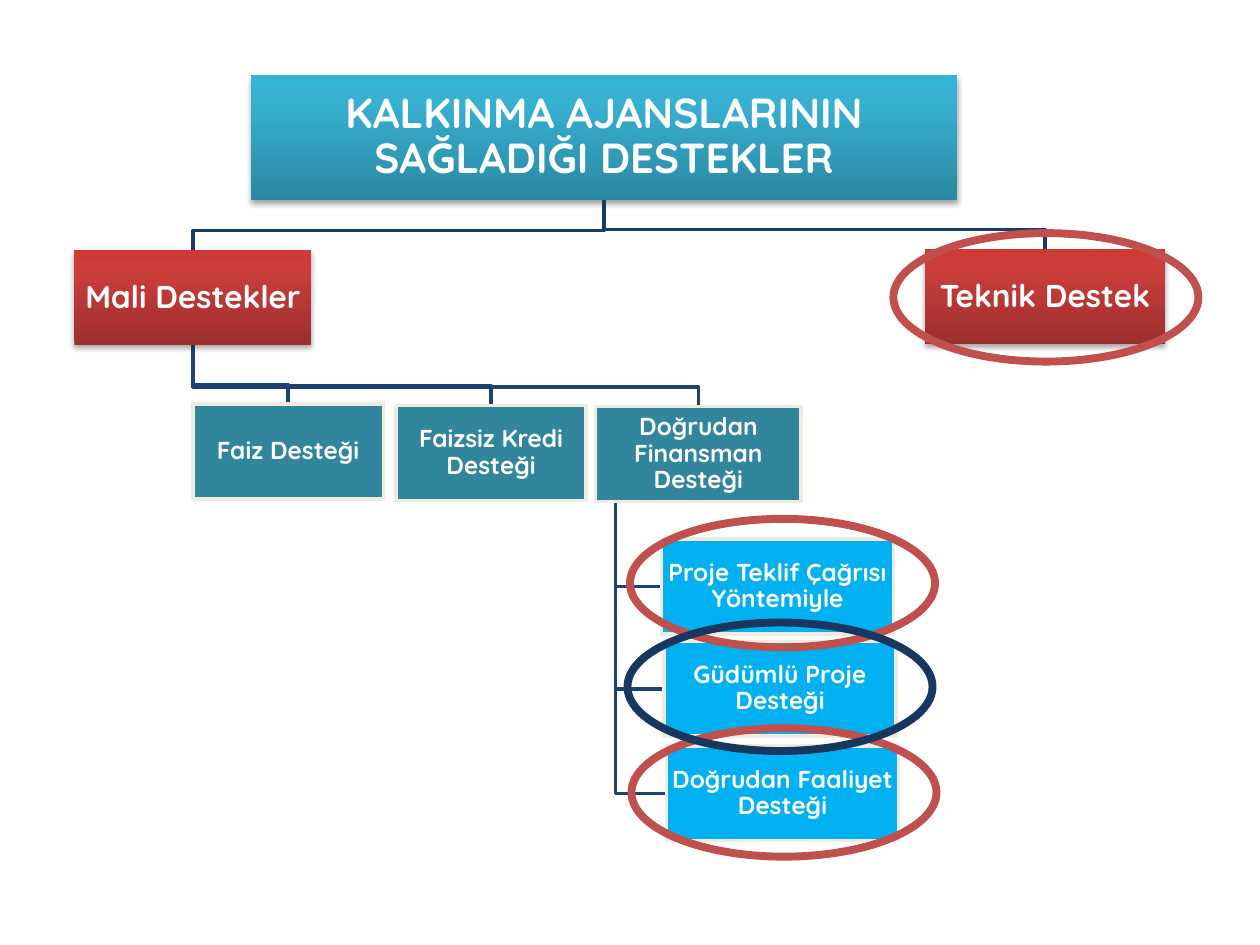
from lxml import etree
from pptx import Presentation
from pptx.dml.color import RGBColor
from pptx.enum.dml import MSO_LINE
from pptx.enum.shapes import MSO_SHAPE
from pptx.enum.text import MSO_ANCHOR, MSO_AUTO_SIZE, PP_ALIGN
from pptx.oxml.ns import qn
from pptx.util import Cm, Pt

RECT, OVAL = MSO_SHAPE.RECTANGLE, MSO_SHAPE.OVAL
MIDDLE, CENTER = MSO_ANCHOR.MIDDLE, PP_ALIGN.CENTER
NO_FIT, SOLID = MSO_AUTO_SIZE.NONE, MSO_LINE.SOLID

THEME = {
    "font": "Quicksand",
    "text": "FFFFFF",
    "border": "EEECE1",
    "line_width": 2,
    "ring_width": 4.5,
    "root": {"size": 24, "stops": ("2A88A2", "37B1D2", "34B4D6")},
    "branch": {"size": 18, "stops": ("9C2F2D", "CB3E3A", "CE3B37"), "link": "193A64"},
    "support": {"size": 14, "fill": "31859C", "link": "1C4271"},
    "method": {"size": 14, "fill": "00B0F0", "link": "1C4271"},
    "red": "C0504D",
    "navy": "17375E",
}
STOP_POSITIONS = (0, 80000, 100000)

ROOT = "KALKINMA AJANSLARININ SAĞLADIĞI DESTEKLER"
ROOT_BOX = (5.05, 1.52, 14.25, 2.51)
FINANCIAL, DIRECT = "Mali Destekler", "Doğrudan Finansman Desteği"
NODE_H = 1.91
NODES = [
    (FINANCIAL, ROOT, "branch", 1.5, 5.05, 4.78),
    ("Teknik Destek", ROOT, "branch", 18.64, 5.03, 4.85),
    ("Faiz Desteği", FINANCIAL, "support", 3.89, 8.15, 3.84),
    ("Faizsiz Kredi Desteği", FINANCIAL, "support", 7.98, 8.18, 3.84),
    (DIRECT, FINANCIAL, "support", 12.01, 8.2, 4.14),
    ("Proje Teklif Çağrısı Yöntemiyle", DIRECT, "method", 13.34, 10.87, 4.67),
    ("Güdümlü Proje Desteği", DIRECT, "method", 13.39, 12.93, 4.67),
    ("Doğrudan Faaliyet Desteği", DIRECT, "method", 13.44, 15.04, 4.67),
]
RING_W, RING_H = 6.15, 2.59
RINGS = [
    (12.7, 10.46, "red"),
    (12.73, 14.68, "red"),
    (18.01, 4.7, "red"),
    (12.65, 12.55, "navy"),
]
BEND = 0.4


def rgb(value):
    return RGBColor.from_string(value)


def set_line(sp, color, width):
    sp.line.dash_style = SOLID
    sp.line.color.rgb = rgb(color)
    sp.line.width = Pt(width)


def add_color(parent, value):
    return etree.SubElement(parent, qn("a:srgbClr"), val=value)


def shade(sp, colors):
    sp.fill.gradient()
    sp.fill.gradient_angle = 90
    stops = sp._element.spPr.find(".//" + qn("a:gsLst"))
    for stop in list(stops):
        stops.remove(stop)
    for pos, color in zip(STOP_POSITIONS, colors):
        add_color(etree.SubElement(stops, qn("a:gs"), pos=str(pos)), color)
    sp.line.fill.background()
    effects = sp._element.spPr.find(qn("a:effectLst"))
    shadow = etree.SubElement(effects, qn("a:outerShdw"), blurRad="40000",
                              dist="23000", dir="5400000", rotWithShape="0")
    etree.SubElement(add_color(shadow, "000000"), qn("a:alpha"), val="35000")


def format_node(sp, text, level):
    style = THEME[level]
    sp.shadow.inherit = False
    if "stops" in style:
        shade(sp, style["stops"])
    else:
        sp.fill.solid()
        sp.fill.fore_color.rgb = rgb(style["fill"])
        set_line(sp, THEME["border"], THEME["line_width"])
    tf = sp.text_frame
    tf.word_wrap, tf.auto_size, tf.vertical_anchor = True, NO_FIT, MIDDLE
    tf.margin_left = tf.margin_right = tf.margin_top = tf.margin_bottom = Cm(0.03)
    p = tf.paragraphs[0]
    p.alignment, p.line_spacing = CENTER, 0.9
    r = p.add_run()
    r.text = text
    r.font.name, r.font.size, r.font.bold = THEME["font"], Pt(style["size"]), True
    r.font.color.rgb = rgb(THEME["text"])


def link_points(parent, child, level):
    px, py, pw, ph = parent
    cx, cy, cw, ch = child
    bottom = py + ph
    if level == "method":
        x, middle = px + BEND, cy + ch / 2
        return [(x, bottom), (x, middle), (cx, middle)]
    start, end, bend = px + pw / 2, cx + cw / 2, cy - BEND
    return [(start, bottom), (start, bend), (end, bend), (end, cy)]


def add_link(s, points, color):
    first, *rest = [(Cm(x), Cm(y)) for x, y in points]
    builder = s.shapes.build_freeform(*first)
    builder.add_line_segments(rest, close=False)
    sp = builder.convert_to_shape()
    sp.shadow.inherit = False
    sp.fill.background()
    set_line(sp, color, THEME["line_width"])


def main():
    prs = Presentation()
    prs.slide_width, prs.slide_height = Cm(25.4), Cm(19.05)
    s = prs.slides.add_slide(prs.slide_layouts[5])

    title = s.shapes.title
    title.left, title.top, title.width, title.height = map(Cm, ROOT_BOX)
    format_node(title, ROOT, "root")

    boxes = {ROOT: ROOT_BOX}
    for text, _, _, x, y, w in NODES:
        boxes[text] = (x, y, w, NODE_H)
    for text, parent, level, *_ in NODES:
        points = link_points(boxes[parent], boxes[text], level)
        add_link(s, points, THEME[level]["link"])
    for text, _, level, *_ in NODES:
        sp = s.shapes.add_shape(RECT, *map(Cm, boxes[text]))
        format_node(sp, text, level)

    for x, y, color in RINGS:
        sp = s.shapes.add_shape(OVAL, Cm(x), Cm(y), Cm(RING_W), Cm(RING_H))
        sp.shadow.inherit = False
        sp.fill.background()
        set_line(sp, THEME[color], THEME["ring_width"])

    prs.save("out.pptx")


if __name__ == "__main__":
    main()
